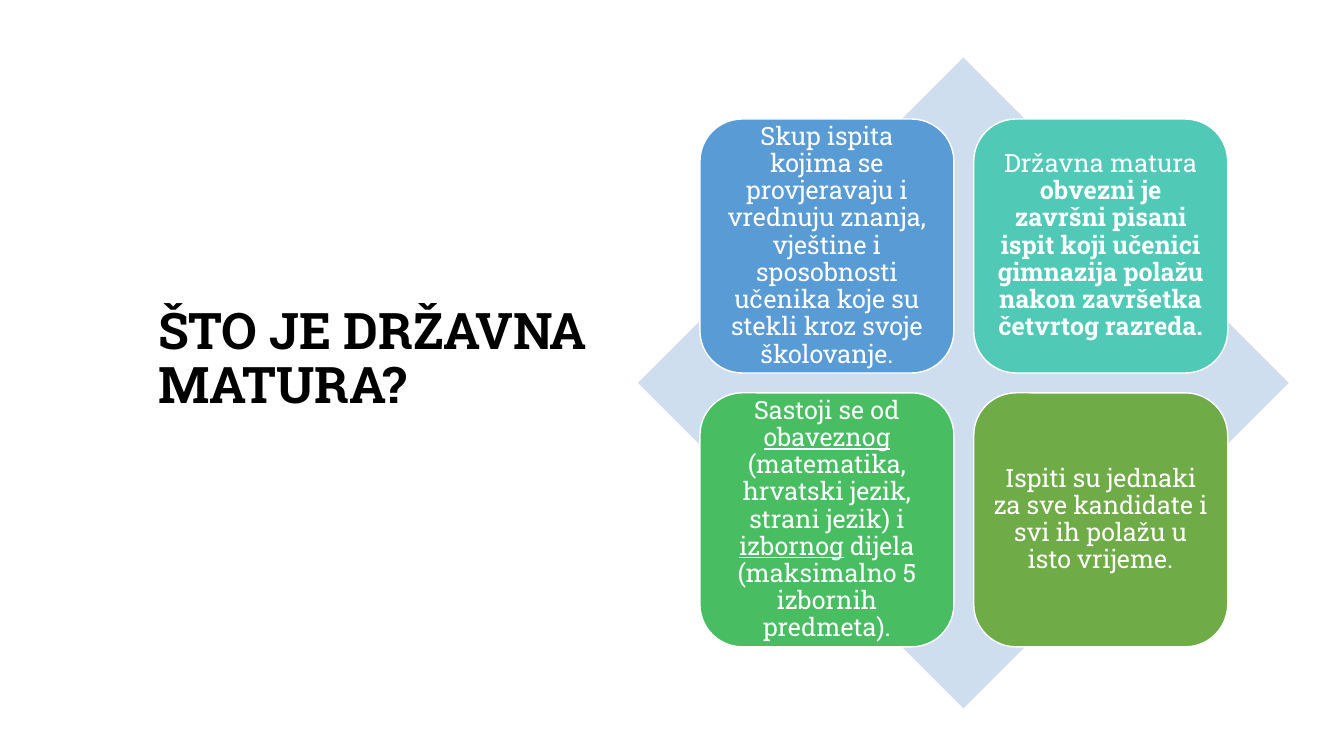
from dataclasses import dataclass

from pptx import Presentation
from pptx import util as u
from pptx.dml.color import RGBColor
from pptx.enum import shapes, text


@dataclass(frozen=True)
class Theme:
    font: str = "Roboto Slab"
    title_size: int = 36
    card_size: int = 18
    ink: str = "000000"
    white: str = "FFFFFF"
    diamond: str = "CFDEEF"
    cards: tuple = ("599BD5", "50C9B6", "48BD62", "6FAB46")
    line_spacing: float = 0.9


def write(paragraph, words, *, theme, size, color, bold=False, underline=False):
    run = paragraph.add_run()
    run.text = words
    run.font.name = theme.font
    run.font.size = u.Pt(size)
    run.font.color.rgb = RGBColor.from_string(color)
    run.font.bold = bold
    run.font.underline = underline


class SlideBuilder:
    def __init__(self, slide, theme):
        self.slide = slide
        self.theme = theme

    def title(self, words, left, top, width, height):
        heading = self.slide.shapes.title
        heading.left, heading.top = u.Cm(left), u.Cm(top)
        heading.width, heading.height = u.Cm(width), u.Cm(height)
        frame = heading.text_frame
        frame.word_wrap = True
        frame.auto_size = text.MSO_AUTO_SIZE.NONE
        frame.vertical_anchor = text.MSO_ANCHOR.MIDDLE
        paragraph = frame.paragraphs[0]
        paragraph.alignment = text.PP_ALIGN.LEFT
        paragraph.line_spacing = self.theme.line_spacing
        write(paragraph, words, theme=self.theme, size=self.theme.title_size,
              color=self.theme.ink, bold=True)

    def block(self, preset, left, top, side, fill):
        block = self.slide.shapes.add_shape(
            preset, u.Cm(left), u.Cm(top), u.Cm(side), u.Cm(side))
        block.shadow.inherit = False
        block.fill.solid()
        block.fill.fore_color.rgb = RGBColor.from_string(fill)
        block.line.fill.background()
        return block

    def card(self, parts, left, top, side, fill):
        card = self.block(shapes.MSO_SHAPE.ROUNDED_RECTANGLE, left, top, side, fill)
        card.line.color.rgb = RGBColor.from_string(self.theme.white)
        card.line.width = u.Pt(1)
        frame = card.text_frame
        frame.word_wrap = True
        frame.vertical_anchor = text.MSO_ANCHOR.MIDDLE
        frame.margin_left = frame.margin_right = u.Cm(0.18)
        frame.margin_top = frame.margin_bottom = u.Cm(0.18)
        paragraph = frame.paragraphs[0]
        paragraph.alignment = text.PP_ALIGN.CENTER
        paragraph.line_spacing = self.theme.line_spacing
        for words, emphasis in parts:
            write(paragraph, words, theme=self.theme, size=self.theme.card_size,
                  color=self.theme.white, **emphasis)


PLAIN, BOLD, UNDERLINED = {}, {"bold": True}, {"underline": True}

FACTS = [
    [("Skup ispita kojima se provjeravaju i vrednuju znanja, vještine i "
      "sposobnosti učenika koje su stekli kroz svoje školovanje.", PLAIN)],
    [("Državna matura ", PLAIN),
     ("obvezni je završni pisani ispit koji učenici gimnazija polažu nakon "
      "završetka četvrtog razreda.", BOLD)],
    [("Sastoji se od ", PLAIN), ("obaveznog", UNDERLINED),
     (" (matematika, hrvatski jezik, strani jezik) i ", PLAIN),
     ("izbornog", UNDERLINED),
     (" dijela (maksimalno 5 izbornih predmeta).", PLAIN)],
    [("Ispiti su jednaki za sve kandidate i svi ih polažu u isto vrijeme.", PLAIN)],
]


def main():
    deck = Presentation()
    deck.slide_width, deck.slide_height = u.Cm(33.87), u.Cm(19.05)
    theme = Theme()
    builder = SlideBuilder(deck.slides.add_slide(deck.slide_layouts[5]), theme)

    builder.title("ŠTO JE DRŽAVNA MATURA?", 3.73, 7.3, 12.4, 3.55)
    builder.block(shapes.MSO_SHAPE.DIAMOND, 16.08, 1.45, 16.4, theme.diamond)

    card_left, card_top, card_side, card_pitch = 17.64, 3.0, 6.4, 6.9
    for index, (fact, fill) in enumerate(zip(FACTS, theme.cards)):
        row, column = divmod(index, 2)
        builder.card(fact, card_left + column * card_pitch,
                     card_top + row * card_pitch, card_side, fill)

    deck.save("out.pptx")


if __name__ == "__main__":
    main()
